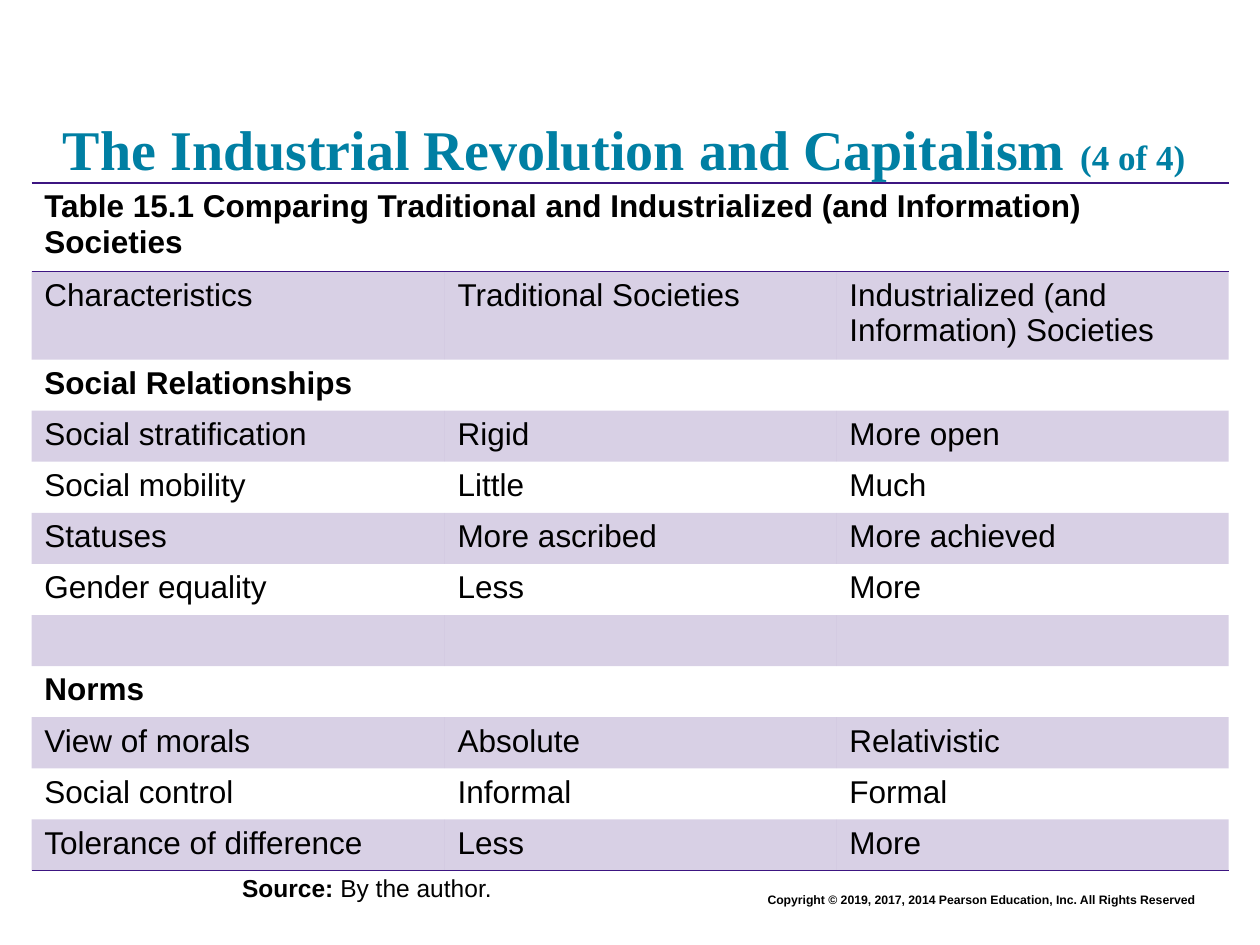
from dataclasses import dataclass

from lxml.etree import SubElement
from pptx import Presentation
from pptx.dml.color import RGBColor
from pptx.enum.text import MSO_ANCHOR as Anchor, PP_ALIGN as Align
from pptx.oxml.ns import qn
from pptx.slide import Slide
from pptx.table import Table, _Cell as Cell
from pptx.text.text import TextFrame, _Paragraph as Paragraph
from pptx.util import Cm, Length, Pt

BLACK = RGBColor(0x00, 0x00, 0x00)
TEAL = RGBColor(0x00, 0x7F, 0xA3)
PURPLE = RGBColor(0x3C, 0x15, 0x81)
BAND_ALPHA = 20000
PLAIN_STYLE = "{2D5ABB26-0587-4C30-8999-92F81FD0307C}"
COLUMN_WIDTHS = (Cm(8.33), Cm(7.9), Cm(7.9))
ROW_HEIGHT = Cm(1.03)


@dataclass(frozen=True)
class Row:
    labels: tuple[str, ...] = ()
    heading: bool = False
    spanning: bool = False
    edges: tuple[str, ...] = ()


ROWS = (
    Row(("Table 15.1 Comparing Traditional and Industrialized (and Information) Societies",),
        heading=True, spanning=True, edges=("a:lnT", "a:lnB")),
    Row(("Characteristics", "Traditional Societies", "Industrialized (and Information) Societies")),
    Row(("Social Relationships",), heading=True),
    Row(("Social stratification", "Rigid", "More open")),
    Row(("Social mobility", "Little", "Much")),
    Row(("Statuses", "More ascribed", "More achieved")),
    Row(("Gender equality", "Less", "More")),
    Row(),
    Row(("Norms",), heading=True),
    Row(("View of morals", "Absolute", "Relativistic")),
    Row(("Social control", "Informal", "Formal")),
    Row(("Tolerance of difference", "Less", "More"), edges=("a:lnB",)),
)


def write(paragraph: Paragraph, text: str, *, size: float = 18, font: str = "Arial",
          color: RGBColor = BLACK, bold: bool = False) -> None:
    run = paragraph.add_run()
    run.text = text
    run.font.size = Pt(size)
    run.font.name = font
    run.font.color.rgb = color
    run.font.bold = bold


def add_frame(slide: Slide, left: Length, top: Length, width: Length, height: Length,
              inset: Length = Cm(0), anchor: Anchor = Anchor.TOP) -> TextFrame:
    frame = slide.shapes.add_textbox(left, top, width, height).text_frame
    frame.word_wrap = True
    frame.vertical_anchor = anchor
    frame.margin_left = frame.margin_right = inset
    frame.margin_top = frame.margin_bottom = inset // 2
    return frame


def rule(cell: Cell, edge: str) -> None:
    properties = cell._tc.get_or_add_tcPr()
    line = SubElement(properties, qn(edge), w=str(int(Pt(1))))
    fill = SubElement(line, qn("a:solidFill"))
    SubElement(fill, qn("a:srgbClr"), val=str(PURPLE))


def shade(cell: Cell, banded: bool) -> None:
    if not banded:
        cell.fill.background()
        return
    cell.fill.solid()
    cell.fill.fore_color.rgb = PURPLE
    color = cell._tc.tcPr.find(qn("a:solidFill")).find(qn("a:srgbClr"))
    SubElement(color, qn("a:alpha"), val=str(BAND_ALPHA))


def fill_row(table: Table, index: int, row: Row) -> None:
    table.rows[index].height = ROW_HEIGHT
    cells = [table.cell(index, column) for column in range(len(COLUMN_WIDTHS))]
    if row.spanning:
        cells[0].merge(cells[-1])
    for cell in cells:
        for edge in row.edges:
            rule(cell, edge)
        shade(cell, banded=index % 2 == 1)
    for cell, label in zip(cells, row.labels):
        write(cell.text_frame.paragraphs[0], label, bold=row.heading)


def add_comparison(slide: Slide) -> None:
    table = slide.shapes.add_table(
        len(ROWS), len(COLUMN_WIDTHS), Cm(0.64), Cm(3.69),
        Length(sum(COLUMN_WIDTHS)), Length(ROW_HEIGHT * len(ROWS))).table
    table.first_row = table.horz_banding = False
    table._tbl.tblPr.find(qn("a:tableStyleId")).text = PLAIN_STYLE
    for column, width in zip(table.columns, COLUMN_WIDTHS):
        column.width = width
    for index, row in enumerate(ROWS):
        fill_row(table, index, row)


def main() -> None:
    deck = Presentation()
    deck.slide_width, deck.slide_height = Cm(25.4), Cm(19.05)
    slide = deck.slides.add_slide(deck.slide_layouts[6])

    rights = add_frame(slide, Cm(4.45), Cm(17.86), Cm(19.89), Cm(0.56),
                       inset=Cm(0.25)).paragraphs[0]
    rights.alignment = Align.RIGHT
    write(rights, "Copyright © 2019, 2017, 2014 Pearson Education, Inc. All Rights Reserved",
          size=7, bold=True)

    title = add_frame(slide, Cm(1.27), Cm(0.61), Cm(22.86), Cm(3.05),
                      anchor=Anchor.BOTTOM).paragraphs[0]
    for text, size in (("The Industrial Revolution and Capitalism ", 32), ("(4 of 4)", 20)):
        write(title, text, size=size, font="Times New Roman", color=TEAL, bold=True)

    add_comparison(slide)

    source = add_frame(slide, Cm(4.88), Cm(17.6), Cm(6.35), Cm(0.61)).paragraphs[0]
    write(source, "Source:", size=14, bold=True)
    write(source, " By the author.", size=14)

    deck.save("out.pptx")


if __name__ == "__main__":
    main()
